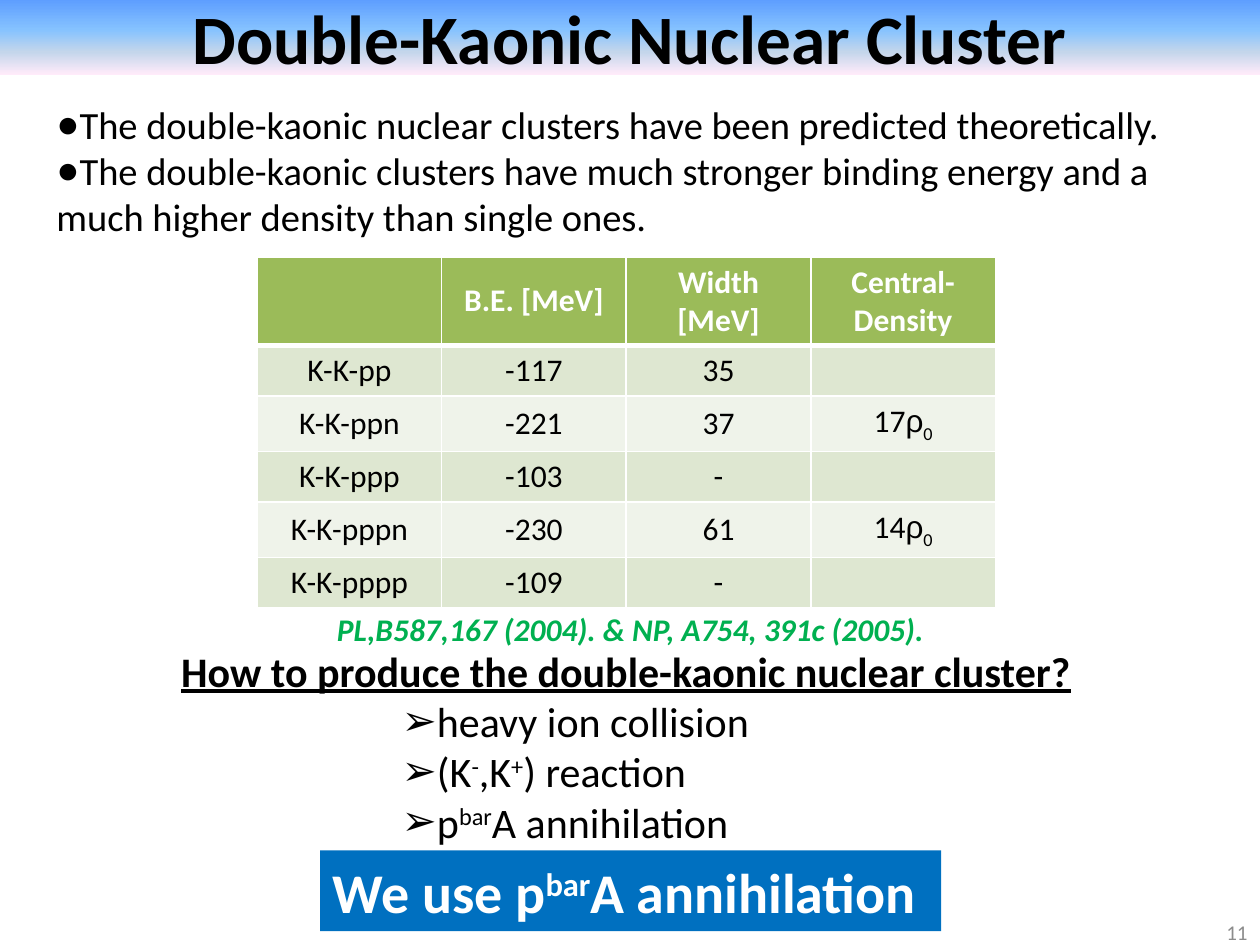
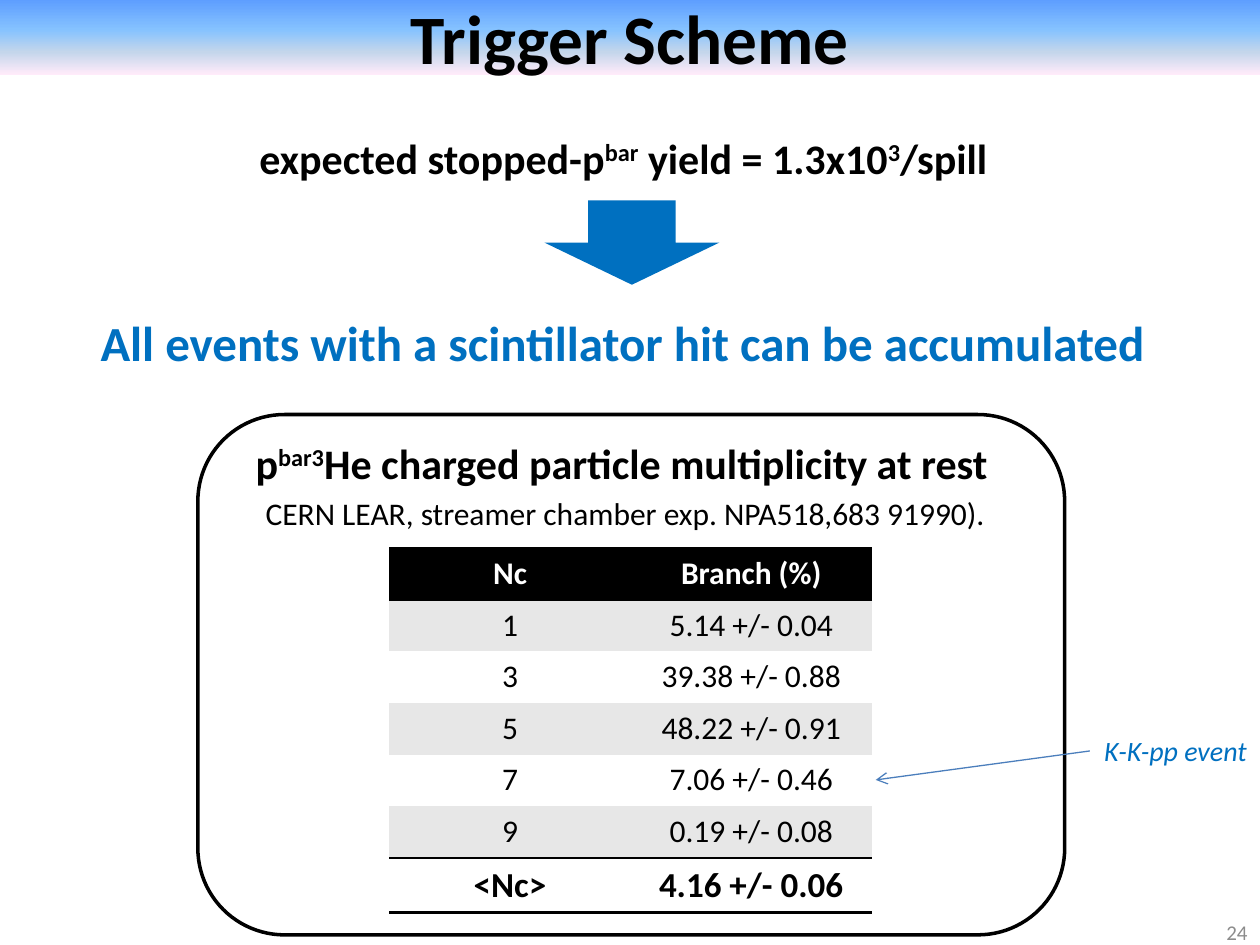
from dataclasses import dataclass

from lxml.etree import SubElement
from pptx import Presentation
from pptx.dml.color import RGBColor
from pptx.enum.shapes import MSO_CONNECTOR, MSO_SHAPE
from pptx.enum.text import MSO_ANCHOR, MSO_AUTO_SIZE, PP_ALIGN
from pptx.oxml.ns import qn
from pptx.util import Inches, Pt


@dataclass(frozen=True)
class Theme:
    font: str = "Calibri"
    symbol_font: str = "Arial"
    black: str = "000000"
    white: str = "FFFFFF"
    blue: str = "0070C0"
    citation: str = "00B050"
    page: str = "8C8C8C"
    arrow: str = "4B7EBC"
    green_header: str = "9BBB59"
    green_bands: tuple = ("DEE7D1", "EFF3EA")
    grey_bands: tuple = ("E7E7E7", "FFFFFF")
    band: tuple = ((0, "5E9EFF"), (40, "85C2FF"), (70, "C4D6EB"), (100, "FFEBFA"))
    title: float = 39.6
    banner: float = 32
    claim: float = 28
    heading: float = 24
    body: float = 22
    total: float = 20
    table: float = 18
    label: float = 16
    small: float = 12
    no_grid_style: str = "{2D5ABB26-0587-4C30-8999-92F81FD0307C}"


@dataclass(frozen=True)
class Box:
    left: float
    top: float
    width: float
    height: float

    def inside(self, dx, dy, width, height):
        return Box(self.left + dx, self.top + dy, width, height)

    def lengths(self):
        return [Inches(v) for v in (self.left, self.top, self.width, self.height)]


THEME = Theme()
BASELINES = {"^": "30000", "_": "-25000"}


def rgb(value):
    return RGBColor.from_string(value)


def apply(target, values):
    for name, value in values.items():
        setattr(target, name, value)


def write_runs(paragraph, text, size, color=THEME.black, **style):
    for part in text.split("|"):
        baseline = BASELINES.get(part[0])
        run = paragraph.add_run()
        run.text = part[1:] if baseline else part
        family = THEME.symbol_font if part == "ρ" else THEME.font
        apply(run.font, {"size": Pt(size), "name": family, **style})
        run.font.color.rgb = rgb(color)
        if baseline:
            run.font._element.set("baseline", baseline)


def add_bullet(paragraph, mark, margin=0, indent=0):
    properties = paragraph._p.get_or_add_pPr()
    properties.set("marL", str(Inches(margin)))
    properties.set("indent", str(Inches(indent)))
    SubElement(properties, qn("a:buFont")).set("typeface", THEME.symbol_font)
    SubElement(properties, qn("a:buChar")).set("char", mark)


def add_text(slide, box, text, size, align=PP_ALIGN.LEFT, wrap=False, **style):
    frame = slide.shapes.add_textbox(*box.lengths()).text_frame
    apply(frame, {"word_wrap": wrap, "auto_size": MSO_AUTO_SIZE.SHAPE_TO_FIT_TEXT})
    paragraph = frame.paragraphs[0]
    paragraph.alignment = align
    write_runs(paragraph, text, size, **style)
    return frame


def add_solid(slide, kind, box, color):
    solid = slide.shapes.add_shape(kind, *box.lengths())
    solid.shadow.inherit = False
    solid.fill.solid()
    solid.fill.fore_color.rgb = rgb(color)
    solid.line.fill.background()
    return solid


def add_titled_slide(deck, title_text, page):
    slide = deck.slides.add_slide(deck.slide_layouts[5])
    title = slide.shapes.title
    places = Box(0, 0, 10, 0.59).lengths()
    apply(title, dict(zip(("left", "top", "width", "height"), places)))
    title.fill.gradient()
    title.fill.gradient_angle = 270
    stops = title._element.spPr.find(".//" + qn("a:gsLst"))
    for stop in list(stops):
        stops.remove(stop)
    for position, color in THEME.band:
        stop = SubElement(stops, qn("a:gs"))
        stop.set("pos", str(position * 1000))
        SubElement(stop, qn("a:srgbClr")).set("val", color)
    frame = title.text_frame
    apply(frame, {"auto_size": MSO_AUTO_SIZE.NONE, "word_wrap": True,
                  "vertical_anchor": MSO_ANCHOR.MIDDLE})
    frame.paragraphs[0].alignment = PP_ALIGN.CENTER
    write_runs(frame.paragraphs[0], title_text, THEME.title, bold=True)
    number = add_text(slide, Box(7.67, 7.2, 2.33, 0.4), page, THEME.small,
                      PP_ALIGN.RIGHT, True, color=THEME.page)
    apply(number, {"auto_size": MSO_AUTO_SIZE.NONE, "vertical_anchor": MSO_ANCHOR.MIDDLE})
    return slide


def add_border(cell, side, color, width):
    properties = cell._tc.get_or_add_tcPr()
    line = properties.makeelement(qn("a:ln" + side), {"w": str(Pt(width))})
    fill = SubElement(line, qn("a:solidFill"))
    SubElement(fill, qn("a:srgbClr")).set("val", color)
    properties.insert(sum(child.tag.startswith(qn("a:ln")) for child in properties), line)


def add_grid(slide, box, rows, heights, header, bands, anchor, borders, total=False):
    table = slide.shapes.add_table(len(rows), len(rows[0]), *box.lengths()).table
    table._tbl.tblPr.find(qn("a:tableStyleId")).text = THEME.no_grid_style
    apply(table, {"first_row": False, "horz_banding": False})
    for column in table.columns:
        column.width = Inches(box.width / len(rows[0]))
    for r, (values, height) in enumerate(zip(rows, heights)):
        table.rows[r].height = Inches(height)
        is_total = total and r == len(rows) - 1
        for c, value in enumerate(values):
            cell = table.cell(r, c)
            cell.vertical_anchor = anchor
            cell.fill.solid()
            cell.fill.fore_color.rgb = rgb(bands[(r - 1) % 2] if r else header)
            for side, (color, width) in borders(r).items():
                add_border(cell, side, color, width)
            paragraph = cell.text_frame.paragraphs[0]
            paragraph.alignment = PP_ALIGN.CENTER
            size = THEME.total if is_total else THEME.table
            if value:
                write_runs(paragraph, value, size, THEME.black if r else THEME.white,
                           bold=r == 0 or is_total)
            else:
                paragraph.font.size = Pt(size)


def add_predictions(slide, box):
    frame = slide.shapes.add_textbox(*box.lengths()).text_frame
    frame.word_wrap = True
    claims = (
        "The double-kaonic nuclear clusters have been predicted theoretically.",
        "The double-kaonic clusters have much stronger binding energy and a "
        "much higher density than single ones.",
    )
    for i, claim in enumerate(claims):
        paragraph = frame.add_paragraph() if i else frame.paragraphs[0]
        add_bullet(paragraph, "●")
        write_runs(paragraph, claim, THEME.body)


def cluster_borders(row):
    white = (THEME.white, 1)
    sides = {"L": white, "R": white, "T": white, "B": white}
    if row == 0:
        sides["B"] = (THEME.white, 3)
    elif row == 1:
        sides["T"] = (THEME.white, 3)
    return sides


def add_cluster_table(slide, box):
    rows = (
        ("", "B.E. [MeV]", "Width [MeV]", "Central-Density"),
        ("K-K-pp", "-117", "35", ""),
        ("K-K-ppn", "-221", "37", "17|ρ|_0"),
        ("K-K-ppp", "-103", "-", ""),
        ("K-K-pppn", "-230", "61", "14|ρ|_0"),
        ("K-K-pppp", "-109", "-", ""),
    )
    add_grid(slide, box, rows, [0.39] + [0.22] * 5, THEME.green_header,
             THEME.green_bands, MSO_ANCHOR.MIDDLE, cluster_borders)
    add_text(slide, box.inside(0.1, 2.75, 5.73, 0.4),
             "PL,B587,167 (2004). & NP, A754, 391c (2005).", THEME.table,
             PP_ALIGN.CENTER, True, color=THEME.citation, bold=True, italic=True)


def add_production(slide, box):
    frame = add_text(slide, box.inside(0, 0, 7.33, 1.72),
                     "How to produce the double-kaonic nuclear cluster?",
                     THEME.heading, bold=True, underline=True)
    for method in ("heavy ion collision", "(K|^-|,K|^+|) reaction", "p|^bar|A annihilation"):
        paragraph = frame.add_paragraph()
        paragraph.level = 4
        add_bullet(paragraph, "➢", 2, -0.25)
        write_runs(paragraph, method, THEME.heading)
    choice = add_solid(slide, MSO_SHAPE.RECTANGLE, box.inside(1.2, 1.68, 4.93, 0.64), THEME.blue)
    choice.text_frame.word_wrap = False
    paragraph = choice.text_frame.paragraphs[0]
    paragraph.alignment = PP_ALIGN.LEFT
    write_runs(paragraph, "We use p|^bar|A annihilation", THEME.banner, THEME.white, bold=True)


def add_yield(slide, box):
    add_text(slide, box.inside(1.26, 0, 6.09, 0.5),
             "expected stopped-p|^bar| yield = 1.3x10|^3|/spill", THEME.heading, bold=True)
    add_solid(slide, MSO_SHAPE.DOWN_ARROW, box.inside(3.62, 0.59, 1.39, 0.67), THEME.blue)
    add_text(slide, box.inside(0, 1.43, 8.78, 0.57),
             "All events with a scintillator hit can be accumulated",
             THEME.claim, color=THEME.blue, bold=True)


def branch_borders(row):
    thick, thin = (THEME.black, 2), (THEME.black, 1)
    return {0: {"T": thick, "B": thick}, 5: {"B": thin},
            6: {"T": thin, "B": thick}}.get(row, {})


def add_multiplicity(slide, box):
    add_text(slide, box.inside(0.36, 0.13, 6.13, 0.5),
             "p|^bar3|He charged particle multiplicity at rest", THEME.heading, bold=True)
    add_text(slide, box.inside(0.44, 0.58, 5.97, 0.4),
             "CERN LEAR, streamer chamber exp. NPA518,683 91990).", THEME.table)
    rows = (
        ("Nc", "Branch (%)"),
        ("1", "5.14 +/- 0.04"),
        ("3", "39.38 +/- 0.88"),
        ("5", "48.22 +/- 0.91"),
        ("7", "7.06 +/- 0.46"),
        ("9", "0.19 +/- 0.08"),
        ("<Nc>", "4.16 +/- 0.06"),
    )
    add_grid(slide, box.inside(1.52, 1.06, 3.83, 2.87), rows, [0.41] * len(rows),
             THEME.black, THEME.grey_bands, MSO_ANCHOR.TOP, branch_borders, True)
    panel = slide.shapes.add_shape(MSO_SHAPE.ROUNDED_RECTANGLE, *box.lengths())
    panel.shadow.inherit = False
    panel.fill.background()
    panel.line.color.rgb = rgb(THEME.black)
    panel.line.width = Pt(2)


def add_event_pointer(slide, box):
    start, end = box.inside(0, 0.19, 0, 0), box.inside(-1.7, 0.42, 0, 0)
    pointer = slide.shapes.add_connector(
        MSO_CONNECTOR.STRAIGHT, *start.lengths()[:2], *end.lengths()[:2])
    pointer.line.color.rgb = rgb(THEME.arrow)
    pointer.line.width = Pt(0.75)
    SubElement(pointer.line._get_or_add_ln(), qn("a:tailEnd")).set("type", "arrow")
    SubElement(pointer._element.spPr, qn("a:effectLst"))
    add_text(slide, box, "K-K-pp event", THEME.label, PP_ALIGN.CENTER, True,
             color=THEME.blue, italic=True)


def main():
    deck = Presentation()
    apply(deck, {"slide_width": Inches(10), "slide_height": Inches(7.5)})

    cluster = add_titled_slide(deck, "Double-Kaonic Nuclear Cluster", "11")
    add_predictions(cluster, Box(0.35, 0.75, 9.3, 1.21))
    add_cluster_table(cluster, Box(2.04, 2.04, 5.86, 2.7))
    add_production(cluster, Box(1.34, 5.07, 7.33, 2.32))

    trigger = add_titled_slide(deck, "Trigger Scheme", "24")
    add_yield(trigger, Box(0.7, 1, 8.78, 2))
    add_multiplicity(trigger, Box(1.57, 3.29, 6.88, 4.13))
    add_event_pointer(trigger, Box(8.65, 5.77, 1.36, 0.37))

    deck.save("out.pptx")


if __name__ == "__main__":
    main()
